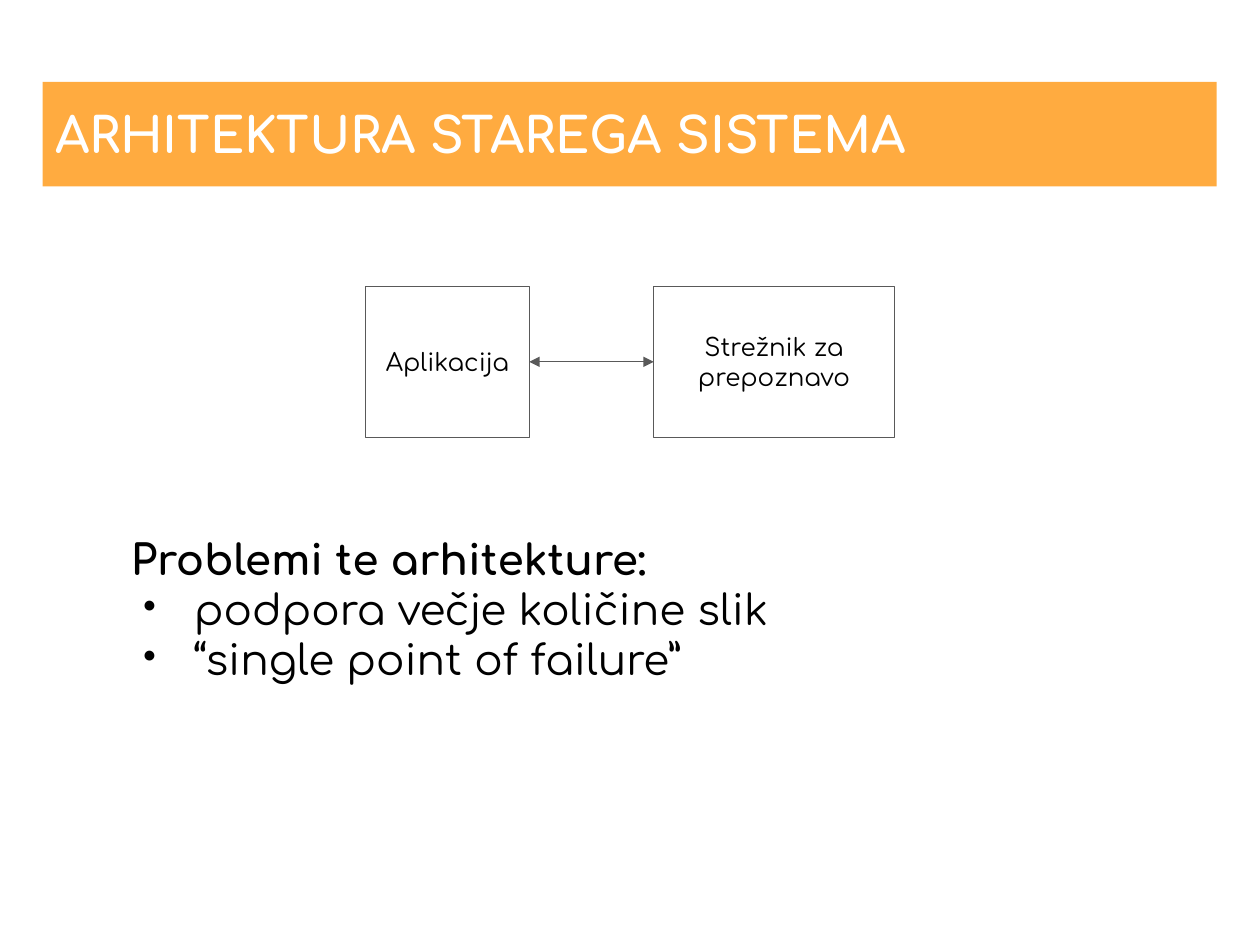
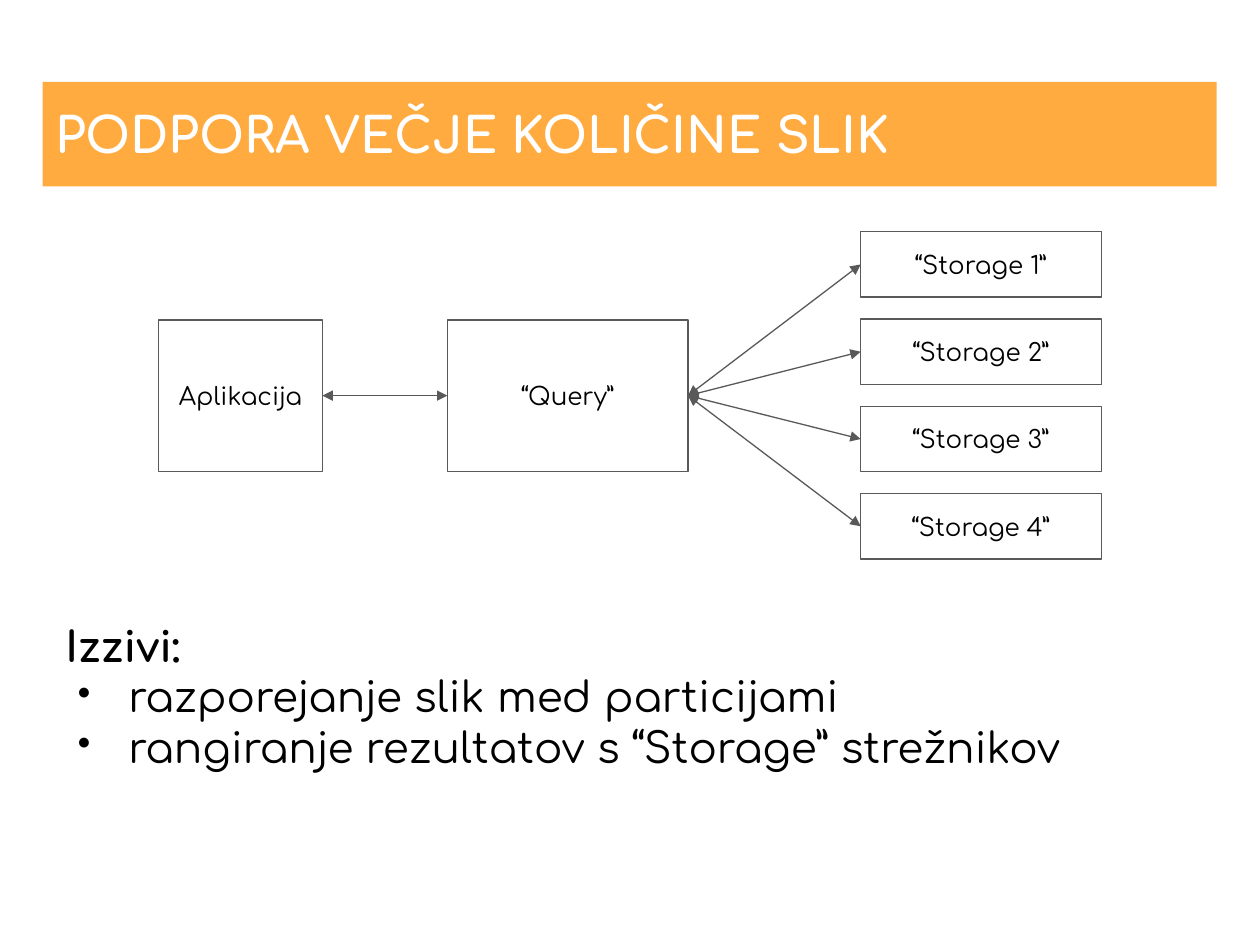
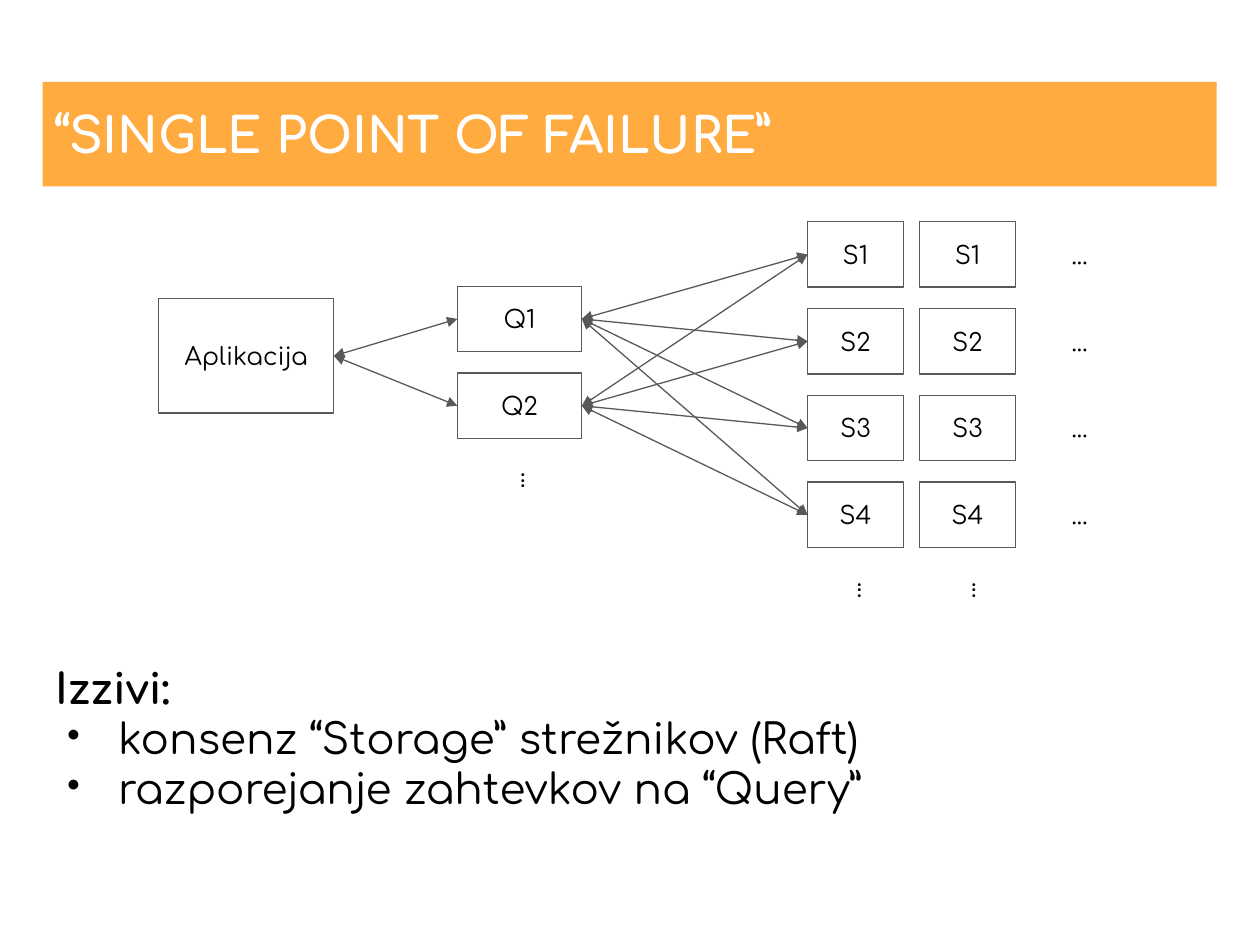
from lxml import etree
from pptx import Presentation
from pptx.dml.color import RGBColor
from pptx.enum.shapes import MSO_CONNECTOR, MSO_SHAPE
from pptx.enum.text import MSO_ANCHOR, PP_ALIGN
from pptx.oxml.ns import qn
from pptx.util import Cm, Pt

RECTANGLE = MSO_SHAPE.RECTANGLE
STRAIGHT = MSO_CONNECTOR.STRAIGHT
MIDDLE, TOP = MSO_ANCHOR.MIDDLE, MSO_ANCHOR.TOP
LEFT, CENTER = PP_ALIGN.LEFT, PP_ALIGN.CENTER

FONT = "Comfortaa"
ORANGE = RGBColor(0xFF, 0xAB, 0x40)
WHITE = RGBColor(0xFF, 0xFF, 0xFF)
BLACK = RGBColor(0x00, 0x00, 0x00)
GRAY = RGBColor(0x59, 0x59, 0x59)

LEFT_SITE, RIGHT_SITE = 1, 3  # connection sites of a rectangle
BLANK_LAYOUT = 6

# Content; frames are (left, top, width, height) in centimetres
TITLE_BAND = (0.86, 1.65, 23.67, 2.11)
ROW_HEIGHT = 1.32

SINGLE_SERVER = {
    "title": "ARHITEKTURA STAREGA SISTEMA",
    "heading": "Problemi te arhitekture:",
    "points": ["podpora večje količine slik", "“single point of failure”"],
    "notes_frame": (2.39, 9.58, 18.67, 5.38),
}
PARTITIONED = {
    "title": "PODPORA VEČJE KOLIČINE SLIK",
    "heading": "Izzivi:",
    "points": ["razporejanje slik med particijami",
               "rangiranje rezultatov s “Storage” strežnikov"],
    "notes_frame": (1.07, 10.64, 23.67, 6.78),
}
REPLICATED = {
    "title": "“SINGLE POINT OF FAILURE”",
    "heading": "Izzivi:",
    "points": ["konsenz “Storage” strežnikov (Raft)",
               "razporejanje zahtevkov na “Query”"],
    "notes_frame": (0.86, 11.71, 23.67, 6.32),
}
STORAGES = ["“Storage 1”", "“Storage 2”", "“Storage 3”", "“Storage 4”"]
QUERIES = ["Q1", "Q2"]
REPLICAS = ["S1", "S2", "S3", "S4"]
ELLIPSES = ["..."] * len(REPLICAS)
VERTICAL_DOTS = [(10.11, 9.27), (16.89, 11.48), (19.2, 11.48)]


def write(shape, lines, size, color, bold=False, align=LEFT, anchor=MIDDLE):
    frame = shape.text_frame
    frame.word_wrap = True
    frame.vertical_anchor = anchor
    frame.margin_left = frame.margin_right = Cm(0.25)
    frame.margin_top = frame.margin_bottom = Cm(0.25)
    frame.text = "\n".join(lines)
    for para in frame.paragraphs:
        para.alignment = align
        para.font.name = FONT
        para.font.size = Pt(size)
        para.font.bold = bold
        para.font.color.rgb = color


def add_bullet(para):
    properties = para._p.get_or_add_pPr()
    properties.set("marL", str(Cm(1.27)))
    properties.set("indent", str(-Cm(1.06)))
    etree.SubElement(properties, qn("a:buFont"), typeface=FONT)
    etree.SubElement(properties, qn("a:buChar"), char="•")


def add_rectangle(page, frame, fill, line=None):
    box = page.shapes.add_shape(RECTANGLE, *map(Cm, frame))
    box.shadow.inherit = False
    box.fill.solid()
    box.fill.fore_color.rgb = fill
    if line is None:
        box.line.fill.background()
    else:
        box.line.color.rgb = line
        box.line.width = Pt(0.75)
    return box


def add_node(page, label, frame, line=GRAY):
    box = add_rectangle(page, frame, WHITE, line)
    write(box, [label], 14, BLACK, align=CENTER)
    return box


def add_column(page, labels, left, top, width, pitch, line=GRAY):
    return [add_node(page, label, (left, top + row * pitch, width, ROW_HEIGHT), line)
            for row, label in enumerate(labels)]


def link_all(page, sources, targets):
    """Join each source to each target with a two-headed arrow."""
    for source in sources:
        for target in targets:
            arrow = page.shapes.add_connector(STRAIGHT, 0, 0, 0, 0)
            arrow.begin_connect(source, RIGHT_SITE)
            arrow.end_connect(target, LEFT_SITE)
            arrow.line.color.rgb = GRAY
            arrow.line.width = Pt(0.75)
            outline = arrow.line._get_or_add_ln()
            for end in ("a:headEnd", "a:tailEnd"):
                etree.SubElement(outline, qn(end), type="triangle")
            etree.SubElement(arrow._element.spPr, qn("a:effectLst"))


def add_page(deck, content):
    """Start a slide with its notes text and title band."""
    page = deck.slides.add_slide(deck.slide_layouts[BLANK_LAYOUT])
    notes = page.shapes.add_textbox(*map(Cm, content["notes_frame"]))
    write(notes, [content["heading"], *content["points"]], 24, BLACK)
    heading, *points = notes.text_frame.paragraphs
    heading.font.bold = True
    for point in points:
        add_bullet(point)
    band = add_rectangle(page, TITLE_BAND, ORANGE)
    write(band, [content["title"]], 28, WHITE, bold=True)
    return page


def build_single_server(deck):
    page = add_page(deck, SINGLE_SERVER)
    application = add_node(page, "Aplikacija", (7.37, 5.77, 3.3, 3.05))
    server = add_node(page, "Strežnik za prepoznavo", (13.18, 5.77, 4.85, 3.05))
    link_all(page, [application], [server])


def build_partitioned(deck):
    page = add_page(deck, PARTITIONED)
    application = add_node(page, "Aplikacija", (3.2, 6.45, 3.3, 3.05))
    query = add_node(page, "“Query”", (9.02, 6.45, 4.85, 3.05))
    storages = add_column(page, STORAGES, 17.35, 4.67, 4.85, 1.76)
    link_all(page, [application], [query])
    link_all(page, [query], storages)


def build_replicated(deck):
    page = add_page(deck, REPLICATED)
    application = add_node(page, "Aplikacija", (3.2, 6.02, 3.53, 2.31))
    queries = add_column(page, QUERIES, 9.22, 5.77, 2.51, 1.75)

    # Storage replicas, then a column for the ones not listed
    columns = [(REPLICAS, GRAY), (REPLICAS, GRAY), (ELLIPSES, WHITE)]
    storages = [add_column(page, labels, 16.28 + index * 2.26, 4.47, 1.93, 1.75, line)
                for index, (labels, line) in enumerate(columns)]
    link_all(page, [application], queries)
    link_all(page, queries, storages[0])

    # Dots below the columns
    for left, top in VERTICAL_DOTS:
        dots = page.shapes.add_textbox(Cm(left), Cm(top), Cm(1.14), Cm(1.17))
        dots.rotation = 90
        write(dots, ["..."], 14, BLACK, anchor=TOP)


def main():
    deck = Presentation()
    deck.slide_width, deck.slide_height = Cm(25.4), Cm(19.05)
    build_single_server(deck)
    build_partitioned(deck)
    build_replicated(deck)
    deck.save("out.pptx")


if __name__ == "__main__":
    main()
